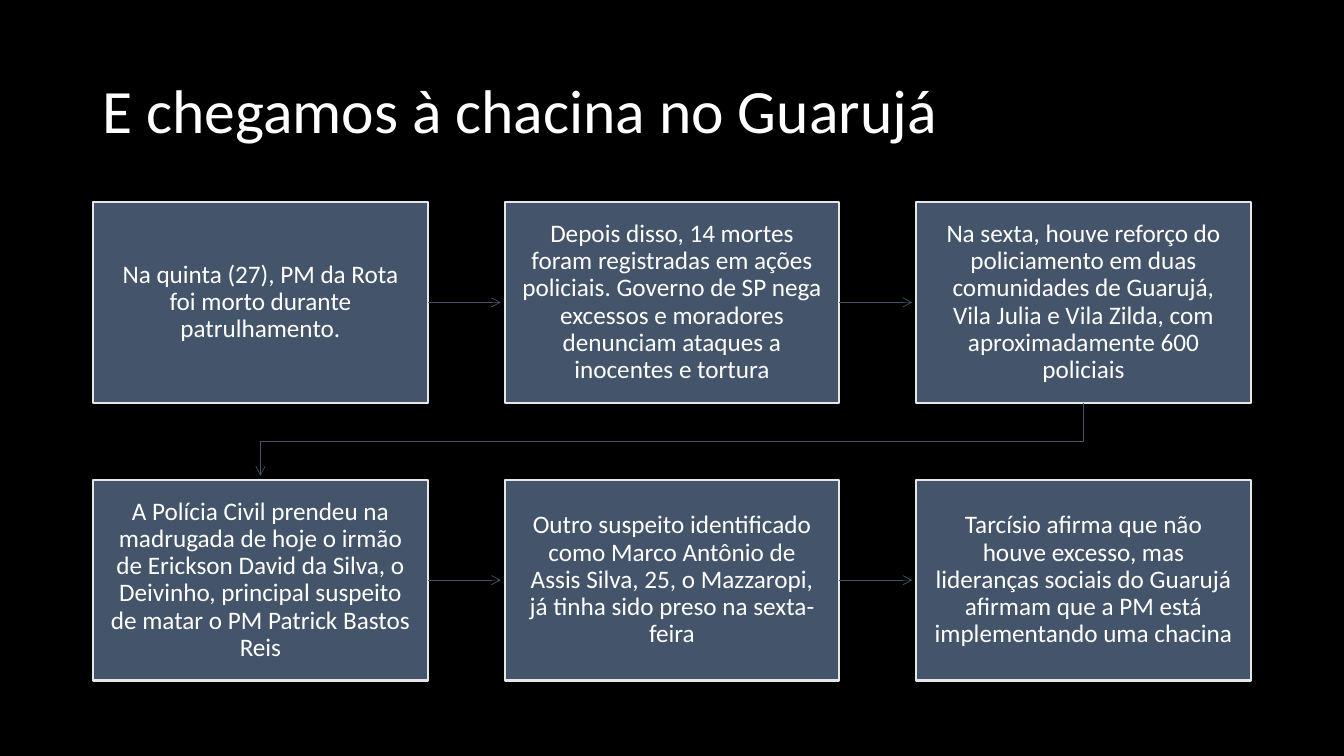
"""Build the slide on the Guarujá killings as a six-step flow in two rows."""
from pptx import Presentation
from pptx import util as u
from pptx.dml.color import RGBColor
from pptx.enum import shapes, text
from pptx.oxml.ns import qn
from lxml import etree

BLACK = RGBColor(0x00, 0x00, 0x00)
WHITE = RGBColor(0xFF, 0xFF, 0xFF)
SLATE = RGBColor(0x44, 0x54, 0x6A)
PALE = RGBColor(0xE7, 0xE6, 0xE6)

COLUMNS = 3
LEFT, TOP = 2.35, 5.09
WIDTH, HEIGHT = 8.43, 5.06
COLUMN_PITCH, ROW_PITCH = 10.37, 7.0
ARROW_GAP = u.Cm(0.1)

EVENTS = [
    "Na quinta (27), PM da Rota foi morto durante patrulhamento.",
    "Depois disso, 14 mortes foram registradas em ações policiais. Governo de SP "
    "nega excessos e moradores denunciam ataques a inocentes e tortura",
    "Na sexta, houve reforço do policiamento em duas comunidades de Guarujá, "
    "Vila Julia e Vila Zilda, com aproximadamente 600 policiais",
    "A Polícia Civil prendeu na madrugada de hoje o irmão de Erickson David da "
    "Silva, o Deivinho, principal suspeito de matar o PM Patrick Bastos Reis",
    "Outro suspeito identificado como Marco Antônio de Assis Silva, 25, o "
    "Mazzaropi, já tinha sido preso na sexta-feira",
    "Tarcísio afirma que não houve excesso, mas lideranças sociais do Guarujá "
    "afirmam que a PM está implementando uma chacina",
]


class FlowSlide:
    """Holds the current slide and its style."""

    font = "Calibri"

    def __init__(self, slide):
        self.slide = slide
        slide.background.fill.solid()
        slide.background.fill.fore_color.rgb = BLACK

    def set_words(self, frame, words, size, align):
        frame.word_wrap = True
        frame.vertical_anchor = text.MSO_ANCHOR.MIDDLE
        paragraph = frame.paragraphs[0]
        paragraph.text = words
        paragraph.alignment = align
        paragraph.line_spacing = 0.9
        paragraph.font.name = self.font
        paragraph.font.size = u.Pt(size)
        paragraph.font.color.rgb = WHITE

    def title(self, words):
        heading = self.slide.shapes.add_textbox(
            u.Cm(2.33), u.Cm(1.01), u.Cm(29.21), u.Cm(3.68))
        self.set_words(heading.text_frame, words, 44, text.PP_ALIGN.LEFT)

    def step(self, column, row, words):
        step = self.slide.shapes.add_shape(
            shapes.MSO_SHAPE.RECTANGLE,
            u.Cm(LEFT + column * COLUMN_PITCH), u.Cm(TOP + row * ROW_PITCH),
            u.Cm(WIDTH), u.Cm(HEIGHT))
        step.shadow.inherit = False
        step.fill.solid()
        step.fill.fore_color.rgb = SLATE
        step.line.color.rgb = PALE
        step.line.width = u.Pt(1.5)
        frame = step.text_frame
        frame.margin_left = frame.margin_right = u.Cm(0.41)
        frame.margin_top = frame.margin_bottom = u.Cm(0.43)
        self.set_words(frame, words, 18, text.PP_ALIGN.CENTER)
        return step

    def style_arrow(self, arrow):
        arrow.line.color.rgb = SLATE
        arrow.line.width = u.Pt(0.5)
        properties = arrow._element.spPr
        etree.SubElement(properties.find(qn("a:ln")), qn("a:tailEnd"), type="arrow")
        etree.SubElement(properties, qn("a:effectLst"))

    def arrow_across(self, source, target):
        middle = source.top + source.height // 2
        arrow = self.slide.shapes.add_connector(
            shapes.MSO_CONNECTOR.STRAIGHT, source.left + source.width, middle,
            target.left - ARROW_GAP, middle)
        arrow.begin_connect(source, 3)
        self.style_arrow(arrow)

    def arrow_to_next_row(self, source, target):
        start_x = source.left + source.width // 2
        end_x = target.left + target.width // 2
        bottom = source.top + source.height
        turn = (bottom + target.top) // 2
        outline = self.slide.shapes.build_freeform(start_x, bottom)
        outline.add_line_segments(
            [(start_x, turn), (end_x, turn), (end_x, target.top - ARROW_GAP)],
            close=False)
        arrow = outline.convert_to_shape()
        arrow.fill.background()
        self.style_arrow(arrow)


def main():
    deck = Presentation()
    deck.slide_width, deck.slide_height = u.Cm(33.87), u.Cm(19.05)
    flow = FlowSlide(deck.slides.add_slide(deck.slide_layouts[6]))
    flow.title("E chegamos à chacina no Guarujá")
    steps = [flow.step(i % COLUMNS, i // COLUMNS, event)
             for i, event in enumerate(EVENTS)]
    for source, target in zip(steps, steps[1:]):
        if source.top == target.top:
            flow.arrow_across(source, target)
        else:
            flow.arrow_to_next_row(source, target)
    deck.save("out.pptx")


if __name__ == "__main__":
    main()
